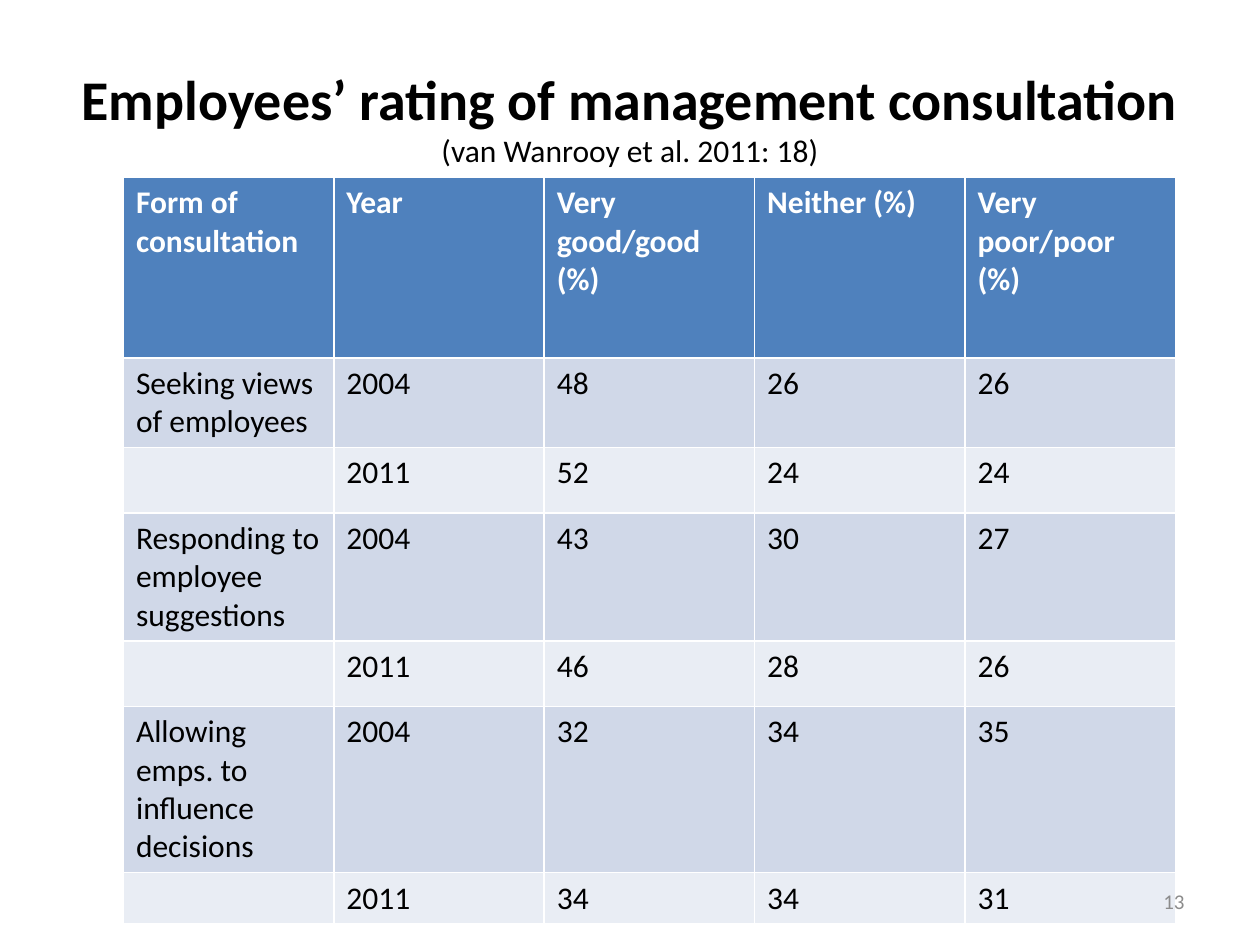
from typing import NamedTuple

from pptx import Presentation
from pptx.dml.color import RGBColor
from pptx.enum.text import MSO_ANCHOR, PP_ALIGN
from pptx.util import Inches, Pt

MIDDLE = MSO_ANCHOR.MIDDLE
CENTER = PP_ALIGN.CENTER
RIGHT = PP_ALIGN.RIGHT
TITLE_ONLY = 5

BLACK = "000000"
WHITE = "FFFFFF"
GREY = "8C8C8C"
HEADER_FILL = "4F81BD"
BAND_FILLS = ("D0D8E8", "E9EDF4")


class Rating(NamedTuple):
    form: str
    year: str
    good: str
    neither: str
    poor: str


class Row(NamedTuple):
    height: float
    rating: Rating


HEADER = Row(1.43, Rating("Form of consultation", "Year", "Very good/good (%)",
                          "Neither (%)", "Very poor/poor (%)"))
RATINGS = [
    Row(0.71, Rating("Seeking views of employees", "2004", "48", "26", "26")),
    Row(0.52, Rating("", "2011", "52", "24", "24")),
    Row(1, Rating("Responding to employee suggestions", "2004", "43", "30", "27")),
    Row(0.52, Rating("", "2011", "46", "28", "26")),
    Row(0.71, Rating("Allowing emps. to influence decisions", "2004", "32", "34", "35")),
    Row(0.32, Rating("", "2011", "34", "34", "31")),
]


def rgb(value: str) -> RGBColor:
    return RGBColor.from_string(value)


def write_text(paragraph, text: str, *, size=18, color=BLACK, bold=False, align=None) -> None:
    run = paragraph.add_run()
    run.text = text
    run.font.name = "Calibri"
    run.font.size = Pt(size)
    run.font.bold = bold
    run.font.color.rgb = rgb(color)
    if align is not None:
        paragraph.alignment = align


def draw_title(slide) -> None:
    title = slide.shapes.title
    title.left, title.top = Inches(0.5), Inches(0.3)
    title.width, title.height = Inches(9), Inches(1.25)
    title.text_frame.vertical_anchor = MIDDLE
    heading = title.text_frame.paragraphs[0]
    write_text(heading, "Employees’ rating of management consultation",
               size=32, bold=True, align=CENTER)
    heading.add_line_break()
    write_text(heading, "(van Wanrooy et al. 2011: 18)", align=CENTER)


def draw_row(table, index: int, row: Row, fill: str, color: str, bold: bool) -> None:
    table.rows[index].height = Inches(row.height)
    for cell, text in zip(table.rows[index].cells, row.rating):
        cell.fill.solid()
        cell.fill.fore_color.rgb = rgb(fill)
        if text:
            write_text(cell.text_frame.paragraphs[0], text, color=color, bold=bold)


def draw_ratings(slide) -> None:
    height = HEADER.height + sum(row.height for row in RATINGS)
    table = slide.shapes.add_table(
        len(RATINGS) + 1, len(Rating._fields),
        Inches(0.98), Inches(1.41), Inches(8.35), Inches(height)).table
    draw_row(table, 0, HEADER, HEADER_FILL, WHITE, True)
    for index, row in enumerate(RATINGS):
        draw_row(table, index + 1, row, BAND_FILLS[index % 2], BLACK, False)


def draw_page_number(slide) -> None:
    frame = slide.shapes.add_textbox(
        Inches(7.17), Inches(6.95), Inches(2.33), Inches(0.4)).text_frame
    frame.word_wrap = True
    frame.vertical_anchor = MIDDLE
    write_text(frame.paragraphs[0], "13", size=12, color=GREY, align=RIGHT)


def main() -> None:
    deck = Presentation()
    deck.slide_width, deck.slide_height = Inches(10), Inches(7.5)
    slide = deck.slides.add_slide(deck.slide_layouts[TITLE_ONLY])
    draw_title(slide)
    draw_ratings(slide)
    draw_page_number(slide)
    deck.save("out.pptx")


if __name__ == "__main__":
    main()
